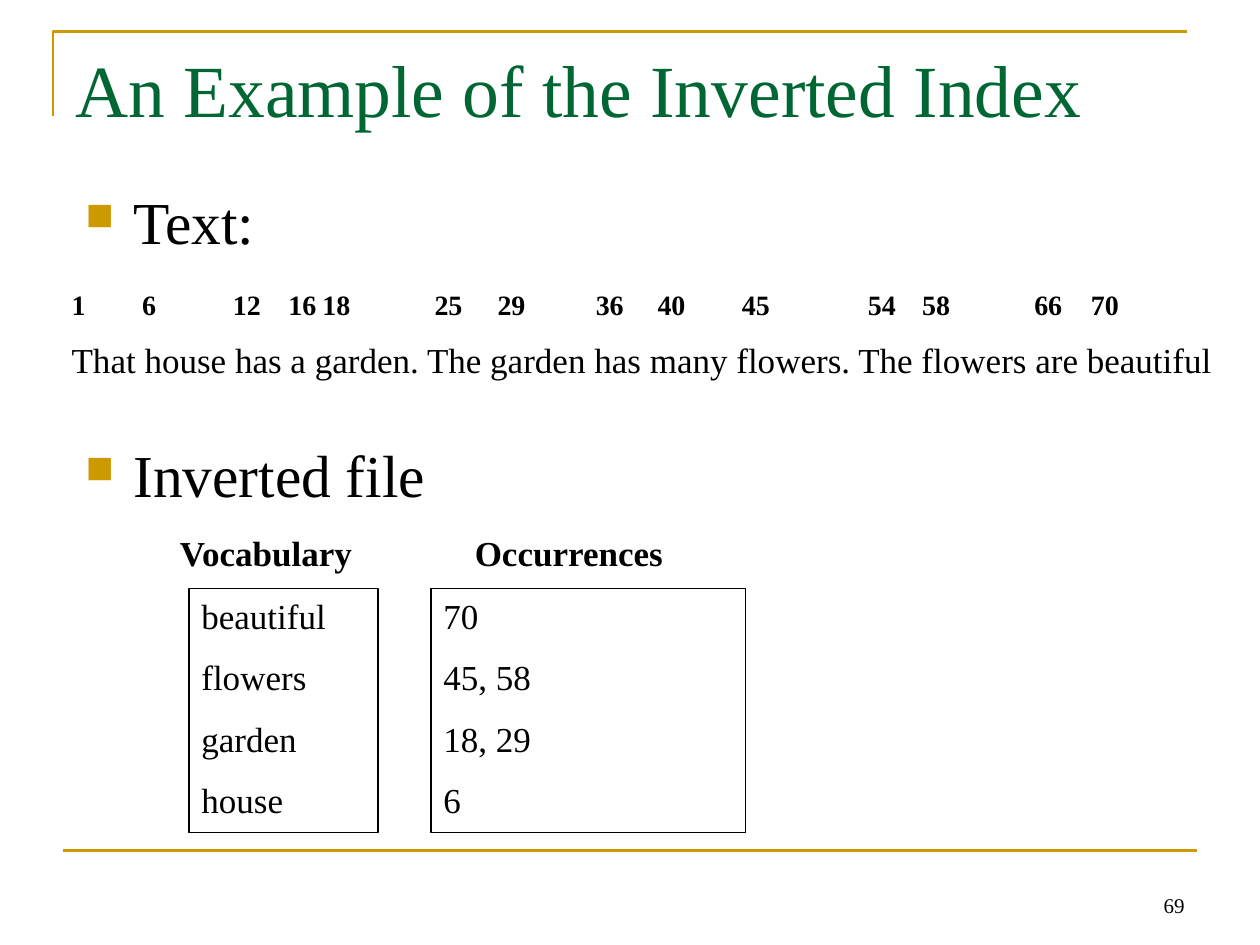
import pptx
import pptx.util
import pptx.dml.color
import pptx.enum.shapes
import pptx.enum.text
import pptx.oxml
import pptx.oxml.ns
from pptx.util import Inches

FONT = "Times New Roman"
GOLD, GREEN, BLACK = "CC9900", "006633", "000000"


def color(hex_string):
    return pptx.dml.color.RGBColor.from_string(hex_string)


def write(shape, lines, size=20, bold=False, font_color=BLACK, space=0, align="LEFT", anchor="TOP"):
    """Fill a shape with one paragraph per line and return the paragraphs."""
    frame = shape.text_frame
    frame.word_wrap = True
    frame.vertical_anchor = getattr(pptx.enum.text.MSO_ANCHOR, anchor)
    frame.text = "\n".join(lines)
    for paragraph in frame.paragraphs:
        paragraph.alignment = getattr(pptx.enum.text.PP_ALIGN, align)
        paragraph.space_before = pptx.util.Pt(space)
        font = paragraph.runs[0].font
        font.name, font.size, font.bold = FONT, pptx.util.Pt(size), bold
        font.color.rgb = color(font_color)
    return frame.paragraphs


presentation = pptx.Presentation()
presentation.slide_width, presentation.slide_height = Inches(10), Inches(7.5)
slide = presentation.slides.add_slide(presentation.slide_layouts[6])
shapes = slide.shapes

# Gold corner above the title and rule above the footer
builder = shapes.build_freeform(Inches(0.42), Inches(0.92))
builder.add_line_segments([(Inches(0.42), Inches(0.25)), (Inches(9.42), Inches(0.25))], close=False)
corner = builder.convert_to_shape()
corner.fill.background()
corner.shadow.inherit = False
rule = shapes.add_connector(pptx.enum.shapes.MSO_CONNECTOR.STRAIGHT,
                            Inches(0.5), Inches(6.75), Inches(9.5), Inches(6.75))
rule._element.spPr.append(pptx.oxml.parse_xml(f"<a:effectLst {pptx.oxml.ns.nsdecls('a')}/>"))
for gold_line in (corner, rule):
    gold_line.line.color.rgb = color(GOLD)
    gold_line.line.width = pptx.util.Pt(1.5)

# Title
title = shapes.add_textbox(Inches(0.5), Inches(0.3), Inches(9), Inches(1.25))
write(title, ["An Example of the Inverted Index"], size=42, font_color=GREEN)

# Bulleted headings, with room between them for the sample text
headings = shapes.add_textbox(Inches(0.58), Inches(1.42), Inches(8.92), Inches(5.58))
heading_paragraphs = write(headings, ["Text:", "Inverted file"], size=34, space=7)
heading_paragraphs[1].space_before = pptx.util.Pt(104)
for paragraph in heading_paragraphs:
    properties = paragraph._p.get_or_add_pPr()
    properties.set("marL", str(Inches(0.38)))
    properties.set("indent", str(-Inches(0.38)))
    for bullet_part in (f'<a:buClr {{}}><a:srgbClr val="{GOLD}"/></a:buClr>',
                        '<a:buSzPct {} val="65000"/>',
                        '<a:buChar {} char="■"/>'):
        properties.append(pptx.oxml.parse_xml(bullet_part.format(pptx.oxml.ns.nsdecls("a"))))

# Sample sentence, with word positions set on tab stops
position_stops = {"6": 0.56, "12": 1.28, "16": 1.72, "18": 1.99, "25": 2.88, "29": 3.38, "36": 4.16,
                  "40": 4.65, "45": 5.32, "54": 6.32, "58": 6.75, "66": 7.64, "70": 8.09}
sample = shapes.add_textbox(Inches(0.47), Inches(2.23), Inches(10.75), Inches(0.88))
positions, sentence = write(sample, [
    "\t".join(["1", *position_stops]),
    "That house has a garden. The garden has many flowers. The flowers are beautiful",
], space=10)
positions.runs[0].font.size = pptx.util.Pt(16)
positions.runs[0].font.bold = True
stops = "".join(f'<a:tab pos="{Inches(stop)}" algn="l"/>' for stop in position_stops.values())
positions._p.get_or_add_pPr().append(
    pptx.oxml.parse_xml(f"<a:tabLst {pptx.oxml.ns.nsdecls('a')}>{stops}</a:tabLst>"))

# Inverted file: a label over a box for each column
columns = [
    ("Vocabulary", 1.33, 1.67, 1.5, 1.5, ["beautiful", "flowers", "garden", "house"]),
    ("Occurrences", 3.67, 2, 3.42, 2.5, ["70", "45, 58", "18, 29", "6"]),
]
for label_text, label_left, label_width, box_left, box_width, entries in columns:
    box = shapes.add_shape(pptx.enum.shapes.MSO_SHAPE.RECTANGLE,
                           Inches(box_left), Inches(4.67), Inches(box_width), Inches(1.94))
    box.shadow.inherit = False
    box.fill.background()
    box.line.color.rgb = color(BLACK)
    box.line.width = pptx.util.Pt(0.75)
    write(box, entries, space=11)
    label = shapes.add_textbox(Inches(label_left), Inches(4.17), Inches(label_width), Inches(0.43))
    write(label, [label_text], bold=True, space=11)

# Slide number
number = shapes.add_textbox(Inches(7.17), Inches(6.83), Inches(2.33), Inches(0.5))
write(number, ["69"], size=12, align="RIGHT", anchor="BOTTOM")

presentation.save("out.pptx")
